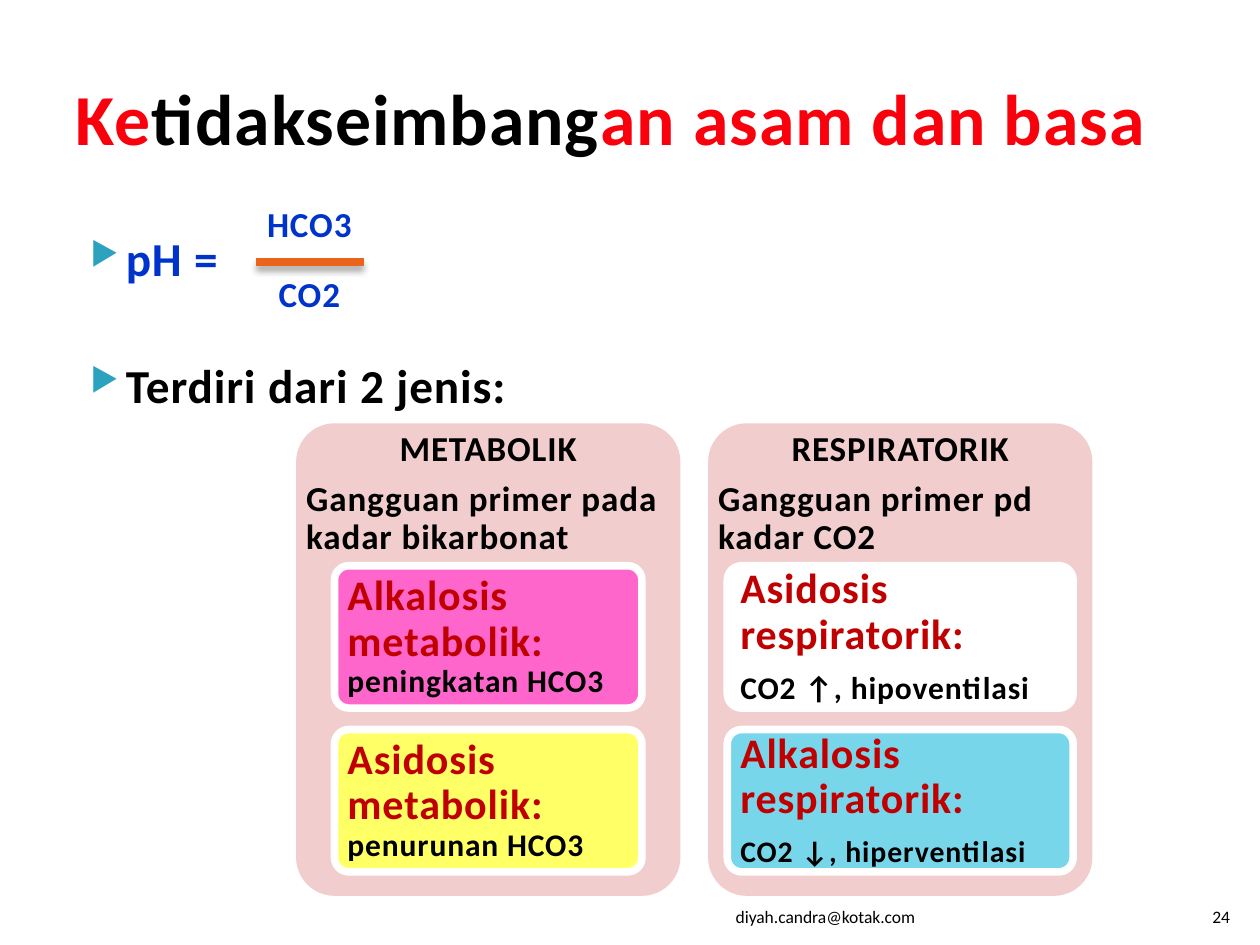
"""Builds the slide on acid-base imbalance: pH ratio and its two kinds."""
import pptx
import pptx.dml.color
import pptx.enum.shapes
import pptx.enum.text
import pptx.oxml
import pptx.oxml.ns
import pptx.util

Pt, Inches = pptx.util.Pt, pptx.util.Inches
RGB = pptx.dml.color.RGBColor
ALIGN, ANCHOR = pptx.enum.text.PP_ALIGN, pptx.enum.text.MSO_ANCHOR
BLACK, WHITE = RGB(0, 0, 0), RGB(255, 255, 255)
RED, DARK_RED = RGB(0xF9, 0x00, 0x0C), RGB(0xC0, 0x00, 0x00)
BLUE, ORANGE = RGB(0x00, 0x33, 0xCC), RGB(0xEB, 0x64, 0x1B)
BLUSH, PINK = RGB(0xF1, 0xCD, 0xCD), RGB(0xFF, 0x66, 0xCC)
YELLOW, AQUA = RGB(0xFF, 0xFF, 0x66), RGB(0x78, 0xD6, 0xEA)
NS = 'xmlns:a="http://schemas.openxmlformats.org/drawingml/2006/main"'

TITLE = [("Ke", 41, RED), ("tidakseimbang", 41, BLACK), ("an asam dan basa", 41, RED)]
POINTS = [("pH =", 27, BLUE), ("Terdiri dari 2 jenis:", 27, BLACK)]
RATIO = [("HCO3", 1.56), ("CO2", 2.11)]
FOOTER = [("diyah.candra@kotak.com", 4.79, 2.57), ("24", 9.46, 0.4)]
KINDS = [
    {"name": "METABOLIK", "about": "Gangguan primer pada kadar bikarbonat", "share": 0.8,
     "cards": [
         (PINK, [[("Alkalosis metabolik: ", 24, DARK_RED), ("peningkatan HCO3", 18, BLACK)]]),
         (YELLOW, [[("Asidosis metabolik: ", 24, DARK_RED), ("penurunan HCO3", 18, BLACK)]])]},
    {"name": "RESPIRATORIK", "about": "Gangguan primer pd kadar CO2", "share": 0.9,
     "cards": [
         (WHITE, [[("Asidosis respiratorik:", 24, DARK_RED)],
                  [("CO2 ↑, hipoventilasi", 18, BLACK)]]),
         (AQUA, [[("Alkalosis respiratorik:", 24, DARK_RED)],
                 [("CO2 ↓, hiperventilasi", 17, BLACK)]])]},
]
PANEL_LEFT, PANEL_TOP, PANEL_W, PANEL_H, PANEL_STEP = 2.35, 3.36, 3.05, 3.75, 3.27
CARD_H, CARD_STEP = 1.13, 1.3


def write(frame, paragraphs, align=ALIGN.LEFT, anchor=ANCHOR.TOP,
          insets=(0.1, 0.05), bold=True, tight=False):
    frame.word_wrap = True
    frame.vertical_anchor = anchor
    frame.margin_left = frame.margin_right = Inches(insets[0])
    frame.margin_top = frame.margin_bottom = Inches(insets[1])
    for index, runs in enumerate(paragraphs):
        paragraph = frame.paragraphs[0] if index == 0 else frame.add_paragraph()
        paragraph.alignment = align
        if tight:
            paragraph.line_spacing = 0.9
            paragraph.space_after = Pt(round(0.35 * runs[0][1]))
        for text, size, color in runs:
            run = paragraph.add_run()
            run.text = text
            run.font.name, run.font.size, run.font.bold = "Calibri", Pt(size), bold
            run.font.color.rgb = color
            if bold:
                run.font._element.set("spc", "50")


def add_text(slide, box, paragraphs, **style):
    frame = slide.shapes.add_textbox(*map(Inches, box)).text_frame
    write(frame, paragraphs, **style)
    return frame


def add_rounded(slide, box, fill, border=None):
    shape = slide.shapes.add_shape(
        pptx.enum.shapes.MSO_SHAPE.ROUNDED_RECTANGLE, *map(Inches, box))
    shape.adjustments[0] = 0.1
    shape.shadow.inherit = False
    shape.fill.solid()
    shape.fill.fore_color.rgb = fill
    if border is None:
        shape.line.fill.background()
    else:
        shape.line.color.rgb = border
        shape.line.width = Pt(4.33)
    return shape


def add_points(slide):
    frame = add_text(slide, (0.5, 1.77, 9, 1.6), [[point] for point in POINTS])
    for paragraph in frame.paragraphs:
        properties = paragraph._p.get_or_add_pPr()
        properties.set("marL", str(Inches(0.4)))
        properties.set("indent", str(Inches(-0.28)))
        for bullet in ('<a:buClr {}><a:srgbClr val="2DA2BF"/></a:buClr>',
                       '<a:buSzPct {} val="68000"/>', '<a:buChar {} char="▶"/>'):
            properties.append(pptx.oxml.parse_xml(bullet.format(NS)))
    frame.paragraphs[1].space_before = Pt(40)


def add_ratio(slide):
    for text, top in RATIO:
        add_text(slide, (1.87, top, 1.17, 0.44), [[(text, 20, BLUE)]], align=ALIGN.CENTER)
    bar = slide.shapes.add_connector(
        pptx.enum.shapes.MSO_CONNECTOR.STRAIGHT, *map(Inches, (2.03, 2.08, 2.89, 2.08)))
    bar.line.color.rgb = ORANGE
    bar.line.width = Pt(4.33)
    bar._element.spPr.append(pptx.oxml.parse_xml(
        f'<a:effectLst {NS}><a:outerShdw blurRad="{Pt(4)}" dist="{Pt(3)}" dir="5400000">'
        '<a:srgbClr val="000000"><a:alpha val="35000"/></a:srgbClr>'
        '</a:outerShdw></a:effectLst>'))


def add_kind(slide, column, kind):
    left = PANEL_LEFT + column * PANEL_STEP
    add_rounded(slide, (left, PANEL_TOP, PANEL_W, PANEL_H), BLUSH)
    heading = add_text(slide, (left, PANEL_TOP, PANEL_W, CARD_H),
                       [[(kind["name"], 20, BLACK)], [(kind["about"], 20, BLACK)]],
                       anchor=ANCHOR.MIDDLE, insets=(0.08, 0.08), tight=True)
    heading.paragraphs[0].alignment = ALIGN.CENTER
    width = PANEL_W * kind["share"]
    for row, (fill, paragraphs) in enumerate(kind["cards"]):
        top = PANEL_TOP + CARD_H + row * CARD_STEP
        card = add_rounded(slide, (left + (PANEL_W - width) / 2, top, width, CARD_H),
                           fill, WHITE)
        write(card.text_frame, paragraphs, anchor=ANCHOR.MIDDLE,
              insets=(0.07, 0.05), tight=True)


def main():
    deck = pptx.Presentation()
    deck.slide_width, deck.slide_height = Inches(10), Inches(7.5)
    slide = deck.slides.add_slide(deck.slide_layouts[6])
    add_text(slide, (0.5, 0.3, 9, 1.25), [TITLE], anchor=ANCHOR.MIDDLE)
    add_points(slide)
    add_ratio(slide)
    for column, kind in enumerate(KINDS):
        add_kind(slide, column, kind)
    for text, left, width in FOOTER:
        add_text(slide, (left, 7.01, width, 0.4), [[(text, 10, BLACK)]],
                 align=ALIGN.RIGHT, anchor=ANCHOR.BOTTOM, bold=False)
    deck.save("out.pptx")


if __name__ == "__main__":
    main()
